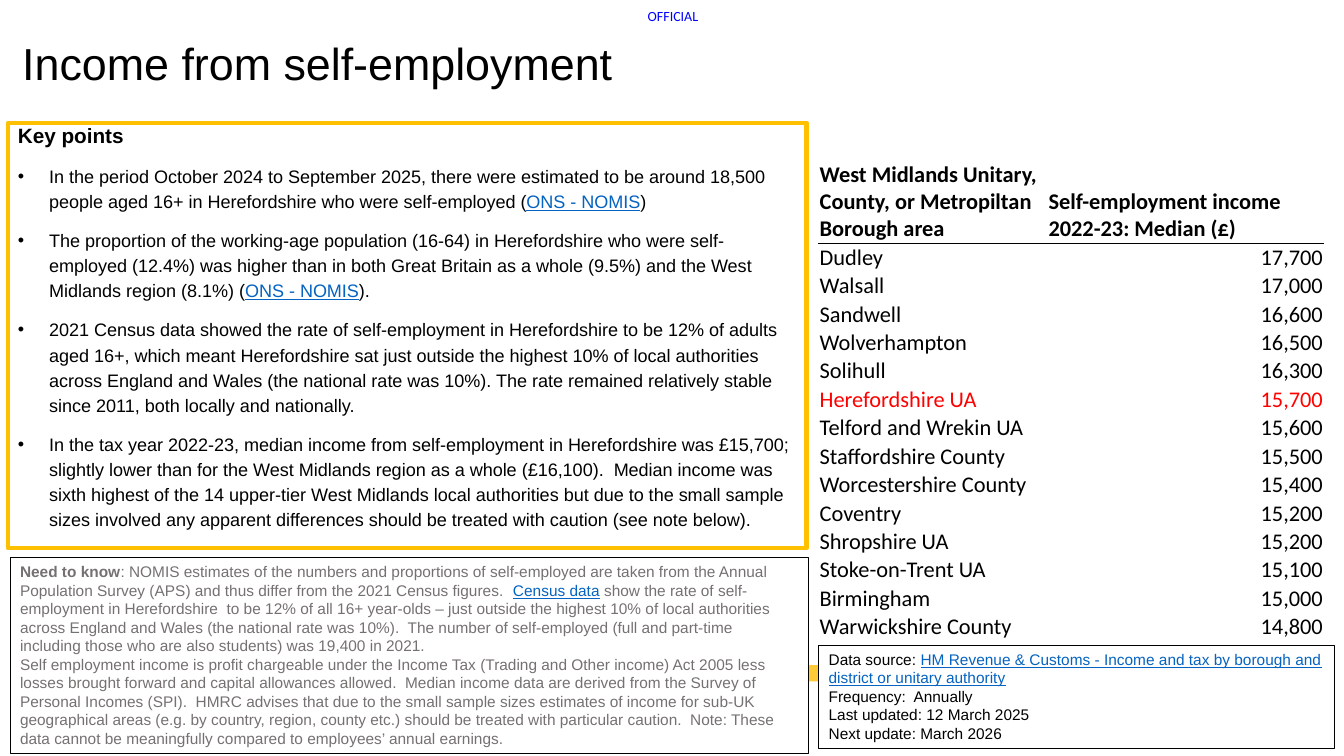
from dataclasses import dataclass

from lxml import etree
from pptx import Presentation
from pptx.dml.color import RGBColor
from pptx.enum.shapes import MSO_SHAPE
from pptx.enum.text import MSO_ANCHOR, MSO_AUTO_SIZE, PP_ALIGN, MSO_UNDERLINE
from pptx.oxml.ns import qn
from pptx.util import Emu, Pt

RECT = MSO_SHAPE.RECTANGLE
TOP, BASE = MSO_ANCHOR.TOP, MSO_ANCHOR.BOTTOM
LEFT, RIGHT, MID = PP_ALIGN.LEFT, PP_ALIGN.RIGHT, PP_ALIGN.CENTER
FIXED = MSO_AUTO_SIZE.NONE
LINE = MSO_UNDERLINE.SINGLE_LINE

BLACK = RGBColor(0x00, 0x00, 0x00)
WHITE = RGBColor(0xFF, 0xFF, 0xFF)
GREY = RGBColor(0x76, 0x71, 0x71)
BLUE = RGBColor(0x00, 0x00, 0xFF)
LINK = RGBColor(0x05, 0x63, 0xC1)
RED = RGBColor(0xFF, 0x00, 0x00)
GOLD = RGBColor(0xFF, 0xC0, 0x00)
AMBER = RGBColor(0xFF, 0xCA, 0x38)

SCALE = 9144  # 100 px to the inch


def px(count: int) -> Emu:
    return Emu(count * SCALE)


@dataclass
class Run:
    text: str
    bold: bool = False
    link: bool = False


@dataclass
class Box:
    left: int
    top: int
    width: int
    height: int
    fill: RGBColor | None = None
    edge: RGBColor | None = None
    weight: float = 0.75

    def area(self) -> list[Emu]:
        return [px(n) for n in (self.left, self.top, self.width, self.height)]


# Places
BAR = Box(31, 660, 1260, 16, fill=AMBER)
MARK = Box(641, 7, 53, 17)
TITLE = Box(12, 7, 829, 88)
KEY = Box(8, 122, 792, 422, edge=GOLD, weight=3)
TABLE = Box(812, 128, 501, 491)
SOURCE = Box(812, 640, 512, 103, fill=WHITE, edge=BLACK)
NEED = Box(10, 553, 792, 195, fill=WHITE, edge=BLACK)
COLS = (227, 274)
HEAD_ROW, ROW = 113, 27

# Wording
NOMIS = Run("ONS - NOMIS", link=True)
POINTS = [
    [Run("In the period October 2024 to September 2025, there were estimated to be around 18,500 "
         "people aged 16+ in Herefordshire who were self-employed ("), NOMIS, Run(")")],
    [Run("The proportion of the working-age population (16-64) in Herefordshire who were "
         "self-employed (12.4%) was higher than in both Great Britain as a whole (9.5%) and the "
         "West Midlands region (8.1%) ("), NOMIS, Run(").")],
    [Run("2021 Census data showed the rate of self-employment in Herefordshire to be 12% of adults "
         "aged 16+, which meant Herefordshire sat just outside the highest 10% of local authorities "
         "across England and Wales (the national rate was 10%). The rate remained relatively stable "
         "since 2011, both locally and nationally.")],
    [Run("In the tax year 2022-23, median income from self-employment in Herefordshire was £15,700; "
         "slightly lower than for the West Midlands region as a whole (£16,100).  Median income was "
         "sixth highest of the 14 upper-tier West Midlands local authorities but due to the small "
         "sample sizes involved any apparent differences should be treated with caution "
         "(see note below).")],
]
NOTES = [
    [Run("Need to know", bold=True),
     Run(": NOMIS estimates of the numbers and proportions of self-employed are taken from the "
         "Annual Population Survey (APS) and thus differ from the 2021 Census figures.  "),
     Run("Census data", link=True),
     Run(" show the rate of self-employment in Herefordshire  to be 12% of all 16+ year-olds – just "
         "outside the highest 10% of local authorities across England and Wales (the national rate "
         "was 10%).  The number of self-employed (full and part-time including those who are also "
         "students) was 19,400 in 2021.")],
    [Run("Self employment income is profit chargeable under the Income Tax (Trading and Other income) "
         "Act 2005 less losses brought forward and capital allowances allowed.  Median income data "
         "are derived from the Survey of Personal Incomes (SPI).  HMRC advises that due to the small "
         "sample sizes estimates of income for sub-UK geographical areas (e.g. by country, region, "
         "county etc.) should be treated with particular caution.  Note: These data cannot be "
         "meaningfully compared to employees’ annual earnings.")],
]
ORIGIN = [
    [Run("Data source: "),
     Run("HM Revenue & Customs - Income and tax by borough and district or unitary authority",
         link=True)],
    [Run("Frequency:  Annually")],
    [Run("Last updated: 12 March 2025")],
    [Run("Next update: March 2026")],
]
HEADS = ("West Midlands Unitary, County, or Metropiltan Borough area",
         "Self-employment income 2022-23: Median (£)")
FOCUS = "Herefordshire UA"
AREAS = [
    ("Dudley", 17700), ("Walsall", 17000), ("Sandwell", 16600), ("Wolverhampton", 16500),
    ("Solihull", 16300), (FOCUS, 15700), ("Telford and Wrekin UA", 15600),
    ("Staffordshire County", 15500), ("Worcestershire County", 15400), ("Coventry", 15200),
    ("Shropshire UA", 15200), ("Stoke-on-Trent UA", 15100), ("Birmingham", 15000),
    ("Warwickshire County", 14800),
]


def write(para, runs: list[Run], *, size: float, font: str = "Arial", color: RGBColor = BLACK,
          align=LEFT, space: float = 1.0, before: int = 0, bullet: bool = False) -> None:
    para.alignment = align
    para.line_spacing = space
    para.space_before = Pt(before)
    if bullet:
        props = para._p.get_or_add_pPr()
        props.set("marL", str(px(31)))
        props.set("indent", str(px(-31)))
        etree.SubElement(props, qn("a:buFont"), typeface="Arial")
        etree.SubElement(props, qn("a:buChar"), char="•")
    for item in runs:
        run = para.add_run()
        run.text = item.text
        run.font.name, run.font.size, run.font.bold = font, Pt(size), item.bold
        run.font.color.rgb = LINK if item.link else color
        if item.link:
            run.font.underline = LINE


def frame(text, anchor=TOP, side: int = 10, edge: int = 5) -> None:
    text.word_wrap = True
    text.auto_size = FIXED
    text.vertical_anchor = anchor
    text.margin_left = text.margin_right = px(side)
    text.margin_top = text.margin_bottom = px(edge)


def panel(slide, box: Box):
    shape = slide.shapes.add_shape(RECT, *box.area())
    shape.shadow.inherit = False
    if box.fill is None:
        shape.fill.background()
    else:
        shape.fill.solid()
        shape.fill.fore_color.rgb = box.fill
    if box.edge is None:
        shape.line.fill.background()
    else:
        shape.line.color.rgb = box.edge
        shape.line.width = Pt(box.weight)
    frame(shape.text_frame)
    return shape.text_frame


def fill_in(text, paras: list[list[Run]], **form) -> None:
    for i, runs in enumerate(paras):
        write(text.add_paragraph() if i else text.paragraphs[0], runs, **form)


def rule(cell, side: str) -> None:
    line = etree.Element(qn(f"a:{side}"), w=str(Pt(0.5)))
    paint = etree.SubElement(line, qn("a:solidFill"))
    etree.SubElement(paint, qn("a:srgbClr"), val=str(BLACK))
    cell._tc.get_or_add_tcPr().insert(0, line)


def grid(slide) -> None:
    rows = [HEADS] + [(area, f"{pay:,}") for area, pay in AREAS]
    table = slide.shapes.add_table(len(rows), len(COLS), *TABLE.area()).table
    table.first_row = table.horz_banding = False
    for col, width in zip(table.columns, COLS):
        col.width = px(width)
    for r, row in enumerate(rows):
        table.rows[r].height = px(ROW if r else HEAD_ROW)
        for c, word in enumerate(row):
            cell = table.cell(r, c)
            cell.fill.background()
            cell.vertical_anchor = BASE
            cell.margin_left = cell.margin_right = cell.margin_top = px(1)
            cell.margin_bottom = px(0)
            write(cell.text_frame.paragraphs[0], [Run(word, bold=r == 0)], size=16, font="Calibri",
                  color=RED if row[0] == FOCUS else BLACK, align=RIGHT if r and c else LEFT)
            if r < 2:
                rule(cell, "lnT" if r else "lnB")


def main() -> None:
    deck = Presentation()
    deck.slide_width, deck.slide_height = px(1333), px(750)
    slide = deck.slides.add_slide(deck.slide_layouts[5])

    # Bar and marking
    panel(slide, BAR)
    mark = slide.shapes.add_textbox(*MARK.area()).text_frame
    frame(mark, side=0, edge=0)
    mark.word_wrap = False
    write(mark.paragraphs[0], [Run("OFFICIAL")], size=10, font="Calibri", color=BLUE, align=MID)

    # Title
    title = slide.shapes.title
    title.left, title.top, title.width, title.height = TITLE.area()
    frame(title.text_frame, anchor=BASE)
    write(title.text_frame.paragraphs[0], [Run("Income from self-employment")], size=32, space=0.9)

    # Key points
    key = panel(slide, KEY)
    write(key.paragraphs[0], [Run("Key points", bold=True)], size=14.8, space=0.8)
    for runs in POINTS:
        write(key.add_paragraph(), runs, size=12.9, space=1.16, before=10, bullet=True)

    # Table, source and notes
    grid(slide)
    fill_in(panel(slide, SOURCE), ORIGIN, size=11)
    fill_in(panel(slide, NEED), NOTES, size=11, color=GREY)

    deck.save("out.pptx")


if __name__ == "__main__":
    main()
